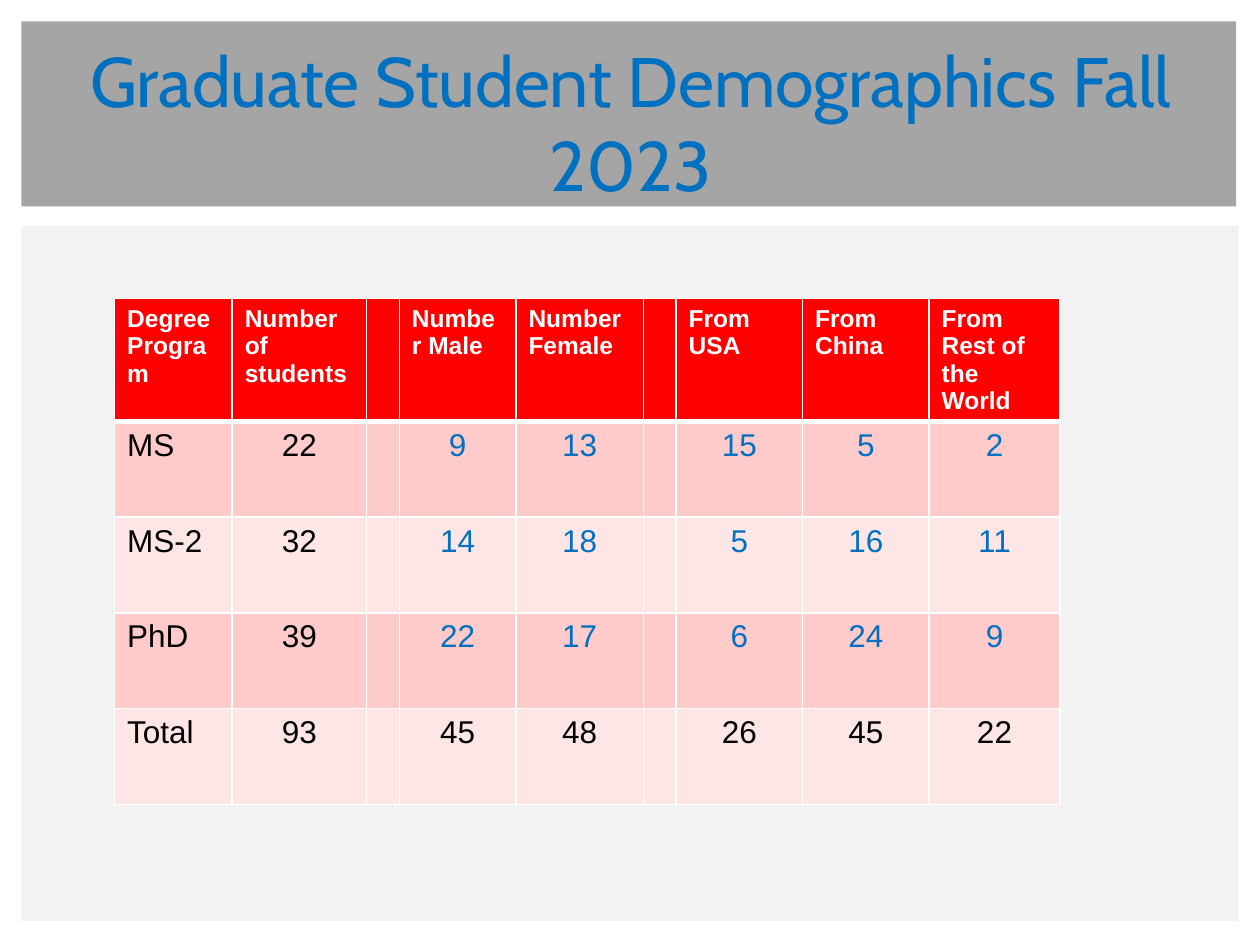
import pptx
import pptx.util
import pptx.dml.color
import pptx.enum.shapes
import pptx.enum.text
import lxml.etree
from pptx.util import Cm, Pt

HUES = {"white": "FFFFFF", "band": "A5A5A5", "panel": "F2F2F2",
        "blue": "0070C0", "black": "000000", "red": "FF0000",
        "pink": "FFCACA", "pale": "FFE6E6"}
ALIGN = pptx.enum.text.PP_ALIGN
RGB = {name: pptx.dml.color.RGBColor.from_string(hue) for name, hue in HUES.items()}


def write(par, text, font, size, hue, bold=False):
    run = par.add_run()
    run.text = text
    run.font.name = font
    run.font.size = Pt(size)
    run.font.bold = bold
    run.font.color.rgb = RGB[hue]


def edge(cell, side, width):
    """Draw one white border of a cell; side is L, R, T or B."""
    ns = "{http://schemas.openxmlformats.org/drawingml/2006/main}"
    props = cell._tc.get_or_add_tcPr()
    line = lxml.etree.SubElement(props, ns + "ln" + side, w=str(Pt(width)))
    fill = lxml.etree.SubElement(line, ns + "solidFill")
    lxml.etree.SubElement(fill, ns + "srgbClr", val=HUES["white"])


deck = pptx.Presentation()
deck.slide_width, deck.slide_height = Cm(25.4), Cm(19.05)
slide = deck.slides.add_slide(deck.slide_layouts[5])

# Backdrop
for top, width, height, hue in [(4.55, 24.54, 14.02, "panel"),
                                (0.43, 24.49, 3.73, "band")]:
    rect = slide.shapes.add_shape(pptx.enum.shapes.MSO_SHAPE.RECTANGLE,
                                  Cm(0.43), Cm(top), Cm(width), Cm(height))
    rect.shadow.inherit = False
    rect.fill.solid()
    rect.fill.fore_color.rgb = RGB[hue]
    rect.line.fill.background()

# Title, brought in front of the backdrop
title = slide.shapes.title
slide.shapes.element.append(title.element)
title.left, title.top = Cm(1.07), Cm(0.99)
title.width, title.height = Cm(23.29), Cm(2.92)
frame = title.text_frame
frame.auto_size = pptx.enum.text.MSO_AUTO_SIZE.NONE
frame.word_wrap = True
frame.vertical_anchor = pptx.enum.text.MSO_ANCHOR.MIDDLE
frame.paragraphs[0].alignment = ALIGN.CENTER
write(frame.paragraphs[0], "Graduate Student Demographics Fall 2023",
      "Cabin", 40, "blue")

# Table
rows = [
    ["Degree Program", "Number of students", "", "Number Male",
     "Number Female", "", "From USA", "From China", "From Rest of the World"],
    ["MS", "22", "", "9", "13", "", "15", "5", "2"],
    ["MS-2", "32", "", "14", "18", "", "5", "16", "11"],
    ["PhD", "39", "", "22", "17", "", "6", "24", "9"],
    ["Total", "93", "", "45", "48", "", "26", "45", "22"],
]
wide = [2.37, 2.71, 0.66, 2.35, 2.57, 0.66, 2.55, 2.55, 2.64]
high = 1.93
last = len(rows) - 1
table = slide.shapes.add_table(len(rows), len(wide), Cm(2.31), Cm(6.02),
                               Cm(sum(wide)), Cm(high * len(rows))).table
for col, width in zip(table.columns, wide):
    col.width = Cm(width)

for r, row in enumerate(rows):
    table.rows[r].height = Cm(high)
    head = r == 0
    for c, text in enumerate(row):
        cell = table.cell(r, c)
        for side in "LRTB":
            thick = (r, side) in [(0, "B"), (1, "T")]
            edge(cell, side, 3 if thick else 1)
        cell.fill.solid()
        cell.fill.fore_color.rgb = RGB["red" if head else "pink" if r % 2 else "pale"]
        if not text:
            continue
        par = cell.text_frame.paragraphs[0]
        if head:
            write(par, text, "Arial", 14, "white", True)
        else:
            par.alignment = ALIGN.CENTER if c else ALIGN.LEFT
            hue = "black" if c < 2 or r == last else "blue"
            write(par, text, "Arial", 18, hue)

deck.save("out.pptx")
